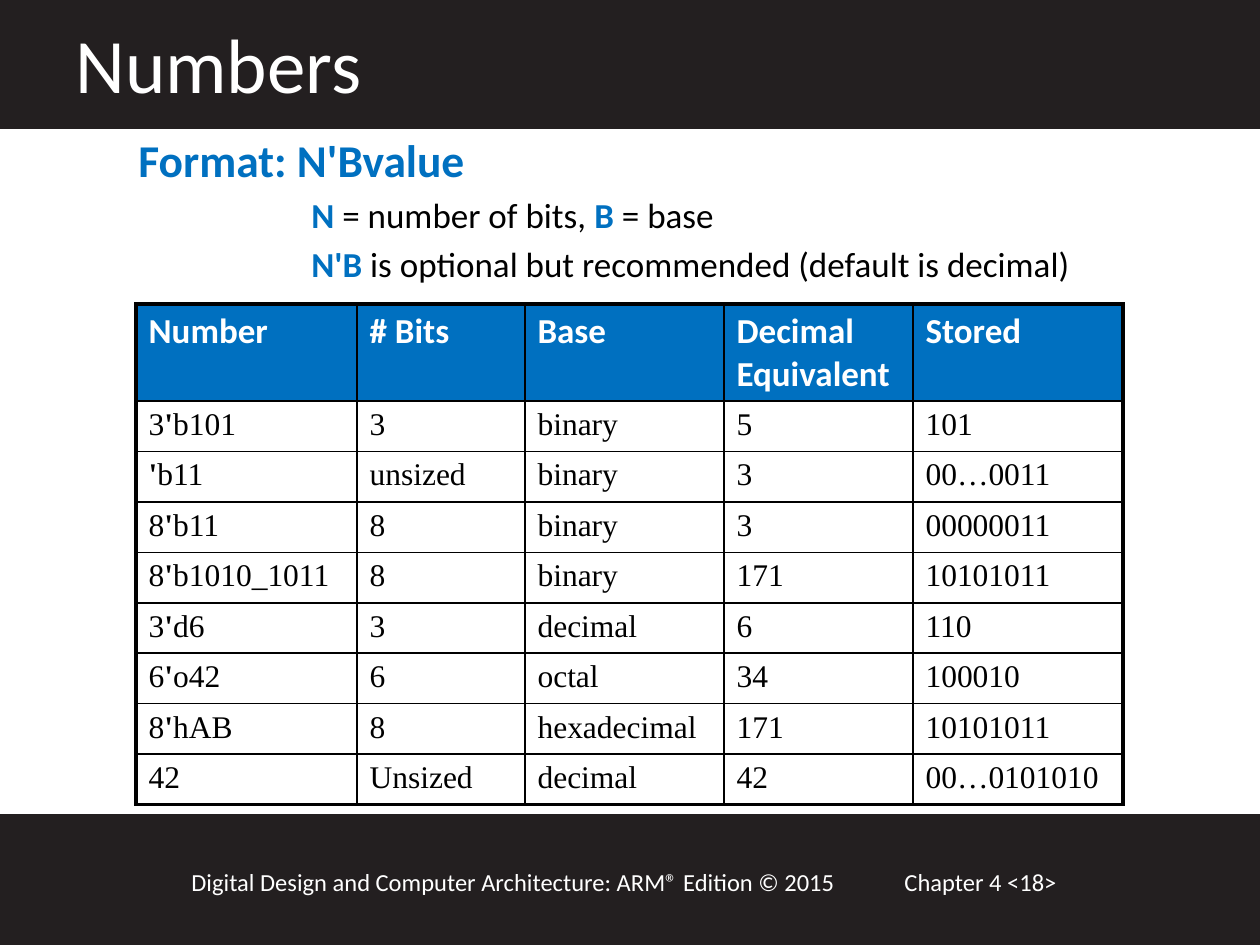
from lxml.etree import SubElement
from pptx import Presentation
from pptx.dml.color import RGBColor
from pptx.enum.shapes import MSO_SHAPE
from pptx.oxml.ns import qn
from pptx.util import Emu, Pt

DARK, WHITE, BLACK, BLUE = "231F20", "FFFFFF", "000000", "0070C0"
SANS, SERIF = "Calibri", "Times New Roman"


def px(length):
    return Emu(length * 914400 // 126)


def color(value):
    return RGBColor.from_string(value)


class SlideBuilder:
    def __init__(self, slide):
        self.slide = slide

    def style(self, span, size, fill, bold=False, face=SANS):
        span.font.size = Pt(size)
        span.font.name = face
        span.font.bold = bold
        span.font.color.rgb = color(fill)

    def spans(self, para, pieces, size, face=SANS):
        """Write (text, colour, bold) pieces as runs of one paragraph."""
        for text, fill, bold in pieces:
            span = para.add_run()
            span.text = text
            self.style(span, size, fill, bold, face)

    def band(self, x, y, width, height):
        shape = self.slide.shapes.add_shape(
            MSO_SHAPE.RECTANGLE, px(x), px(y), px(width), px(height))
        shape.shadow.inherit = False
        shape.fill.solid()
        shape.fill.fore_color.rgb = color(DARK)
        shape.line.color.rgb = color(DARK)
        shape.line.width = Pt(2)

    def text_box(self, x, y, width, height):
        box = self.slide.shapes.add_textbox(px(x), px(y), px(width), px(height))
        box.text_frame.word_wrap = True
        return box.text_frame

    def label(self, text, x, y, width, height, size):
        frame = self.text_box(x, y, width, height)
        frame.text = text
        self.style(frame.paragraphs[0].runs[0], size, WHITE)

    def headed_text(self, heading, lines, x, y, width, height, indent):
        frame = self.text_box(x, y, width, height)
        self.spans(frame.paragraphs[0], [(heading, BLUE, True)], 26)
        for pieces in lines:
            para = frame.add_paragraph()
            para._p.get_or_add_pPr().set("marL", str(px(indent)))
            para.space_before = Pt(4)
            self.spans(para, pieces, 20)

    def borders(self, cell, widths):
        properties = cell._tc.get_or_add_tcPr()
        for side, width in zip("LRTB", widths):
            line = SubElement(properties, qn(f"a:ln{side}"), w=str(Pt(width)))
            fill = SubElement(line, qn("a:solidFill"))
            SubElement(fill, qn("a:srgbClr"), val=BLACK)

    def table(self, rows, x, y, columns, header_height, body_height):
        last_row, last_column = len(rows) - 1, len(columns) - 1
        frame = self.slide.shapes.add_table(
            len(rows), len(columns), px(x), px(y),
            px(sum(columns)), px(header_height + body_height))
        table = frame.table
        table.first_row = table.horz_banding = False
        for column, width in zip(table.columns, columns):
            column.width = px(width)
        for r, values in enumerate(rows):
            table.rows[r].height = (
                px(body_height) // last_row if r else px(header_height))
            for c, value in enumerate(values):
                cell = table.cell(r, c)
                # Heavy lines only around the outside
                edges = (c == 0, c == last_column, r == 0, r == last_row)
                self.borders(cell, [2.25 if edge else 1 for edge in edges])
                para = cell.text_frame.paragraphs[0]
                if r == 0:
                    cell.fill.solid()
                    cell.fill.fore_color.rgb = color(BLUE)
                    self.spans(para, [(value, WHITE, True)], 20)
                else:
                    cell.fill.background()
                    size, quote, base = value.partition("'")
                    pieces = [(text, BLACK, text == "'")
                              for text in (size, quote, base) if text]
                    self.spans(para, pieces, 18, SERIF)


def main():
    deck = Presentation()
    deck.slide_width, deck.slide_height = px(1260), px(945)
    page = SlideBuilder(deck.slides.add_slide(deck.slide_layouts[6]))

    # Footer and title bands
    page.band(0, 816, 1260, 129)
    page.band(0, 0, 1260, 127)
    page.label("Chapter 4 <18>", 892, 861, 273, 43, 14)
    page.label("Digital Design and Computer Architecture: ARM® Edition © 2015",
               179, 861, 724, 43, 14)

    # Table of number literals
    rows = [
        ("Number", "# Bits", "Base", "Decimal Equivalent", "Stored"),
        ("3'b101", "3", "binary", "5", "101"),
        ("'b11", "unsized", "binary", "3", "00…0011"),
        ("8'b11", "8", "binary", "3", "00000011"),
        ("8'b1010_1011", "8", "binary", "171", "10101011"),
        ("3'd6", "3", "decimal", "6", "110"),
        ("6'o42", "6", "octal", "34", "100010"),
        ("8'hAB", "8", "hexadecimal", "171", "10101011"),
        ("42", "Unsized", "decimal", "42", "00…0101010"),
    ]
    page.table(rows, 136, 304, (221, 168, 199, 189, 210), 97, 403)

    # Format explanation
    lines = [
        [("N", BLUE, True), (" = number of bits, ", BLACK, False),
         ("B", BLUE, True), (" = base", BLACK, False)],
        [("N'B", BLUE, True),
         (" is optional but recommended (default is decimal)", BLACK, False)],
    ]
    page.headed_text("Format: N'Bvalue", lines, 126, 126, 1071, 683, 173)

    # Title
    page.label("Numbers", 63, 10, 1092, 106, 44)

    deck.save("out.pptx")


if __name__ == "__main__":
    main()
